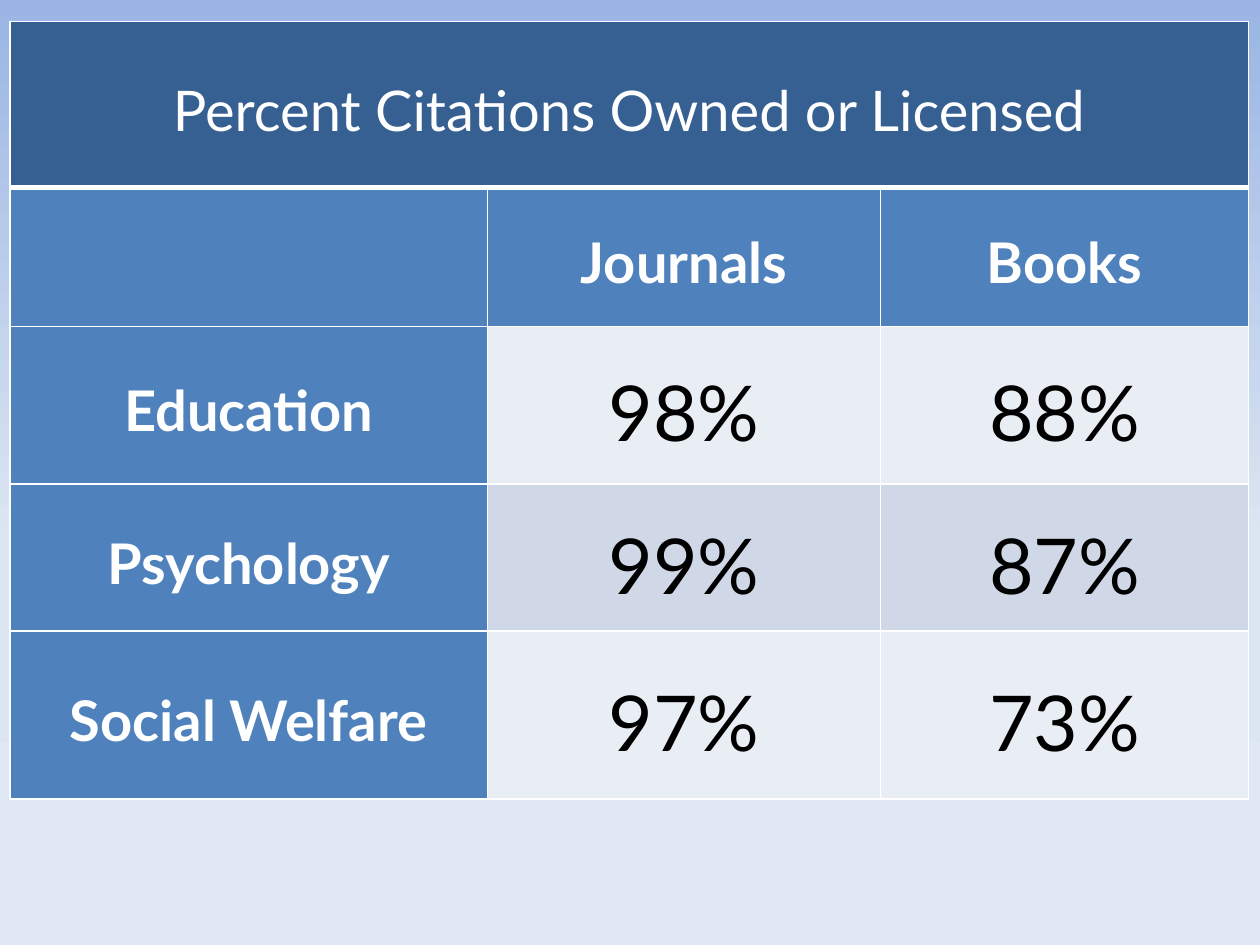
import copy
from dataclasses import dataclass

import pptx
import pptx.dml.color
import pptx.enum.text
import pptx.oxml
import pptx.oxml.ns
import pptx.util
from pptx.util import Inches

FONT = "Lato"
WHITE, BLACK = "FFFFFF", "000000"
TITLE_BLUE, HEADER_BLUE = "376092", "4F81BD"
BANDS = ("E9EDF4", "D0D8E8")
BACKGROUND_STOPS = ((0, "9AB5E4"), (0.57, "DCE6F2"), (1, "E1E8F5"))

COLUMN_WIDTHS = (3.79, 3.12, 2.92)
ROW_HEIGHTS = (1.32, 1.1, 1.25, 1.17, 1.33)
THIN, THICK = 1, 3


@dataclass
class Subject:
    name: str
    journals: str
    books: str


SUBJECTS = (
    Subject("Education", "98%", "88%"),
    Subject("Psychology", "99%", "87%"),
    Subject("Social Welfare", "97%", "73%"),
)


def rgb(color: str) -> pptx.dml.color.RGBColor:
    return pptx.dml.color.RGBColor.from_string(color)


def paint_background(slide) -> None:
    """Fill the slide with a top-to-bottom gradient."""
    fill = slide.background.fill
    fill.gradient()
    fill.gradient_angle = 270
    stop_list = slide.element.xpath(".//a:gsLst")[0]
    stop_list.insert(1, copy.deepcopy(stop_list[0]))
    for stop, (position, color) in zip(fill.gradient_stops, BACKGROUND_STOPS):
        stop.position = position
        stop.color.rgb = rgb(color)


def set_borders(cell, top: float = THIN, bottom: float = THIN) -> None:
    """Draw white borders; they must precede the fill in the cell properties."""
    properties = cell._tc.get_or_add_tcPr()
    widths = {"lnL": THIN, "lnR": THIN, "lnT": top, "lnB": bottom}
    for index, (side, width) in enumerate(widths.items()):
        properties.insert(index, pptx.oxml.parse_xml(
            f'<a:{side} {pptx.oxml.ns.nsdecls("a")} w="{pptx.util.Pt(width)}">'
            f'<a:solidFill><a:srgbClr val="{WHITE}"/></a:solidFill></a:{side}>'))


def write_text(cell, text: str, *, size: float = 32, color: str = WHITE,
               bold: bool = True) -> None:
    cell.vertical_anchor = pptx.enum.text.MSO_ANCHOR.MIDDLE
    cell.margin_left = cell.margin_right = Inches(0.07)
    cell.margin_top = cell.margin_bottom = 0
    paragraph = cell.text_frame.paragraphs[0]
    paragraph.alignment = pptx.enum.text.PP_ALIGN.CENTER
    paragraph.line_spacing = 1.15
    run = paragraph.add_run()
    run.text = text
    run.font.name = FONT
    run.font.size = pptx.util.Pt(size)
    run.font.bold = bold
    run.font.color.rgb = rgb(color)


def fill_cell(cell, color: str) -> None:
    cell.fill.solid()
    cell.fill.fore_color.rgb = rgb(color)


def add_citation_table(slide) -> None:
    table = slide.shapes.add_table(
        len(ROW_HEIGHTS), len(COLUMN_WIDTHS), Inches(0.08), Inches(0.17),
        Inches(sum(COLUMN_WIDTHS)), Inches(sum(ROW_HEIGHTS))).table
    for column, width in zip(table.columns, COLUMN_WIDTHS):
        column.width = Inches(width)
    for row, height in zip(table.rows, ROW_HEIGHTS):
        row.height = Inches(height)

    # Title row across all columns, with a thick rule below
    title = table.cell(0, 0)
    title.merge(table.cell(0, len(COLUMN_WIDTHS) - 1))
    write_text(title, "Percent Citations Owned or Licensed", bold=False)
    for cell in table.rows[0].cells:
        fill_cell(cell, TITLE_BLUE)
        set_borders(cell, bottom=THICK)

    # Column headings
    for cell, heading in zip(table.rows[1].cells, ("", "Journals", "Books")):
        fill_cell(cell, HEADER_BLUE)
        set_borders(cell, top=THICK)
        if heading:
            write_text(cell, heading)

    # One banded row per subject
    for index, subject in enumerate(SUBJECTS):
        name, *percents = table.rows[index + 2].cells
        fill_cell(name, HEADER_BLUE)
        set_borders(name)
        write_text(name, subject.name)
        for cell, value in zip(percents, (subject.journals, subject.books)):
            fill_cell(cell, BANDS[index % len(BANDS)])
            set_borders(cell)
            write_text(cell, value, size=44, color=BLACK, bold=False)


def main() -> None:
    presentation = pptx.Presentation()
    presentation.slide_width = Inches(10)
    presentation.slide_height = Inches(7.5)
    blank_layout = presentation.slide_layouts[6]
    slide = presentation.slides.add_slide(blank_layout)
    paint_background(slide)
    add_citation_table(slide)
    presentation.save("out.pptx")


if __name__ == "__main__":
    main()
